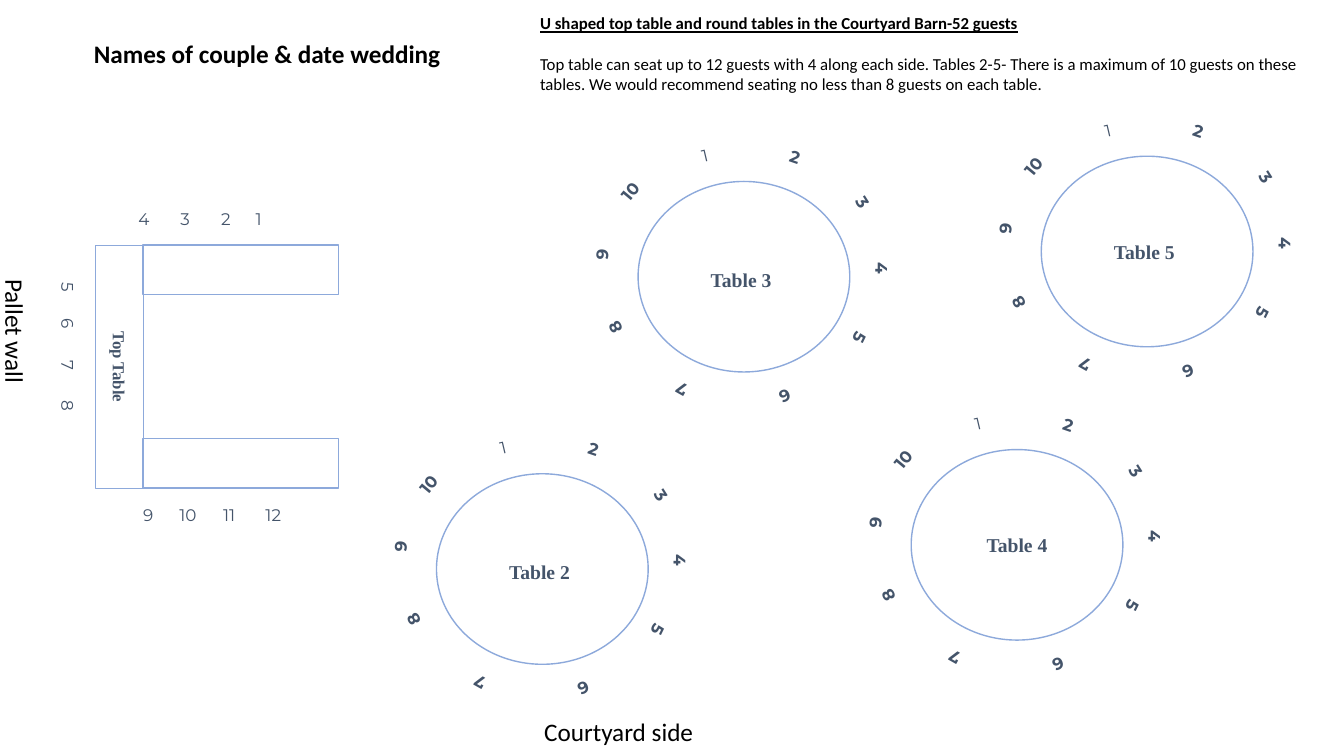
from pptx import Presentation
from pptx.dml.color import RGBColor
from pptx.enum.shapes import MSO_SHAPE
from pptx.enum.text import MSO_ANCHOR, MSO_AUTO_SIZE, PP_ALIGN
from pptx.oxml import parse_xml
from pptx.oxml.ns import nsdecls
from pptx.util import Pt

BLACK = RGBColor(0, 0, 0)
WHITE = RGBColor(255, 255, 255)
SLATE = RGBColor(0x44, 0x54, 0x6A)
TABLE_BLUE = RGBColor(0x8D, 0xA9, 0xDB)


def write(shape, *texts, font="Calibri", size=18, color=BLACK, bold=False,
          align=PP_ALIGN.LEFT, anchor=MSO_ANCHOR.TOP, margins=(7.2, 3.6, 7.2, 3.6), tabs=()):
    frame = shape.text_frame
    frame.word_wrap = True
    frame.auto_size = MSO_AUTO_SIZE.NONE
    frame.vertical_anchor = anchor
    frame.margin_left, frame.margin_top, frame.margin_right, frame.margin_bottom = map(Pt, margins)
    for index, text in enumerate(texts):
        paragraph = frame.paragraphs[0] if index == 0 else frame.add_paragraph()
        paragraph.alignment = align
        if tabs:
            stops = "".join(f'<a:tab pos="{Pt(stop)}" algn="ctr"/>' for stop in tabs)
            paragraph._p.get_or_add_pPr().append(
                parse_xml(f'<a:tabLst {nsdecls("a")}>{stops}</a:tabLst>'))
        run = paragraph.add_run()
        run.text = text
        run.font.name = font
        run.font.size = Pt(size)
        run.font.color.rgb = color
        run.font.bold = bold
    return frame


def add_outline(shapes, kind, left, top, width, height, rotation=0, line=None, fill=None):
    shape = shapes.add_shape(kind, Pt(left), Pt(top), Pt(width), Pt(height))
    shape.shadow.inherit = False
    shape.rotation = rotation
    if fill is None:
        shape.fill.background()
    else:
        shape.fill.solid()
        shape.fill.fore_color.rgb = fill
    if line is None:
        shape.line.fill.background()
    else:
        shape.line.color.rgb = line
        shape.line.width = Pt(1)
    return shape


presentation = Presentation()
presentation.slide_width = Pt(960)
presentation.slide_height = Pt(540)
slide = presentation.slides.add_slide(presentation.slide_layouts[5])

title = slide.shapes.title
title.left, title.top, title.width, title.height = Pt(59.8), Pt(23.8), Pt(417.6), Pt(29)
write(title, "Names of couple & date wedding", bold=True)

description = slide.shapes.add_textbox(Pt(378.7), Pt(5.8), Pt(563.8), Pt(65.5))
description_frame = write(
    description,
    "U shaped top table and round tables in the Courtyard Barn-52 guests",
    "Top table can seat up to 12 guests with 4 along each side. Tables 2-5- There is a maximum "
    "of 10 guests on these tables. We would recommend seating no less than 8 guests on each table.",
    size=12)
heading, advice = description_frame.paragraphs
heading.runs[0].font.bold = True
heading.runs[0].font.underline = True
advice.space_before = Pt(14.6)

TABLE_WIDTH, TABLE_HEIGHT = 151.2, 136.1
WIDE, TALL = (54.7, 41.8), (41.8, 54.7)
round_tables = [
    ("Table 3", 455.8, 129.6, (0, 4, 4, 0)),
    ("Table 4", 650.9, 321.1, (0, 0, 0, 0)),
    ("Table 2", 311.8, 338.4, (0, 4, 4, 0)),
    ("Table 5", 743.8, 111.6, (0, 0, 4, 0)),
]
seats = [
    (-28, -86.8, 346.7, WIDE),
    (36.7, -86, 18.8, WIDE),
    (85, -52.9, 57.8, WIDE),
    (98.6, -6.1, 90, TALL),
    (82.8, 43.6, 116, WIDE),
    (29.5, 85.7, 157.7, WIDE),
    (-44.6, 81, 209.2, TALL),
    (-92.2, 36.4, 242.8, TALL),
    (-101.5, -16.2, 275.4, TALL),
    (-81.4, -60.8, 309.8, TALL),
]
for name, left, top, margins in round_tables:
    group = slide.shapes.add_group_shape()
    table = add_outline(group.shapes, MSO_SHAPE.OVAL, left, top, TABLE_WIDTH, TABLE_HEIGHT,
                        line=TABLE_BLUE)
    write(table, name, font="Times New Roman", size=14, color=SLATE, bold=True,
          align=PP_ALIGN.CENTER, anchor=MSO_ANCHOR.MIDDLE, margins=margins)
    center_x, center_y = left + TABLE_WIDTH / 2, top + TABLE_HEIGHT / 2
    for number, (offset_x, offset_y, rotation, (width, height)) in enumerate(seats, start=1):
        seat = add_outline(group.shapes, MSO_SHAPE.OVAL, center_x + offset_x - width / 2,
                           center_y + offset_y - height / 2, width, height, rotation)
        write(seat, str(number), font="Montserrat", size=12, color=SLATE, bold=number > 1,
              align=PP_ALIGN.CENTER, anchor=MSO_ANCHOR.MIDDLE, margins=(0, 0, 0, 0))

courtyard_label = slide.shapes.add_textbox(Pt(381.6), Pt(508.3), Pt(358.6), Pt(29))
write(courtyard_label, "Courtyard side")
wall_label = slide.shapes.add_textbox(Pt(-40.3), Pt(229), Pt(102.2), Pt(29))
wall_label.rotation = 90
write(wall_label, "Pallet wall")

top_table = slide.shapes.add_group_shape()
head = add_outline(top_table.shapes, MSO_SHAPE.RECTANGLE, -1.4, 244.8, 173.5, 34.6, 90,
                   line=TABLE_BLUE)
write(head, "Top Table", font="Times New Roman", size=12, color=SLATE, bold=True,
      align=PP_ALIGN.CENTER, anchor=MSO_ANCHOR.MIDDLE)
for arm_top in (175, 313.2):
    add_outline(top_table.shapes, MSO_SHAPE.RECTANGLE, 102.2, arm_top, 139.7, 35.3,
                line=TABLE_BLUE)

seat_rows = [
    ("5\t6\t7\t8", -35.3, 243.4, 167.8, 31.7, 90, 26.8, (29.4, 58.7, 88)),
    ("4\t3\t2\t1", 64.8, 140.4, 179.3, 32.4, 0, 34, (33.5, 62.5, 86)),
    ("9\t10\t11\t12", 82.8, 351.4, 159.8, 32.4, 0, 19.4, (32, 61.5, 93)),
]
for numbers, left, top, width, height, rotation, indent, tabs in seat_rows:
    row = add_outline(top_table.shapes, MSO_SHAPE.RECTANGLE, left, top, width, height, rotation,
                      fill=WHITE)
    write(row, numbers, font="Montserrat", size=12, color=SLATE, anchor=MSO_ANCHOR.MIDDLE,
          margins=(indent, 0, 0, 0), tabs=tabs)

presentation.save("out.pptx")
